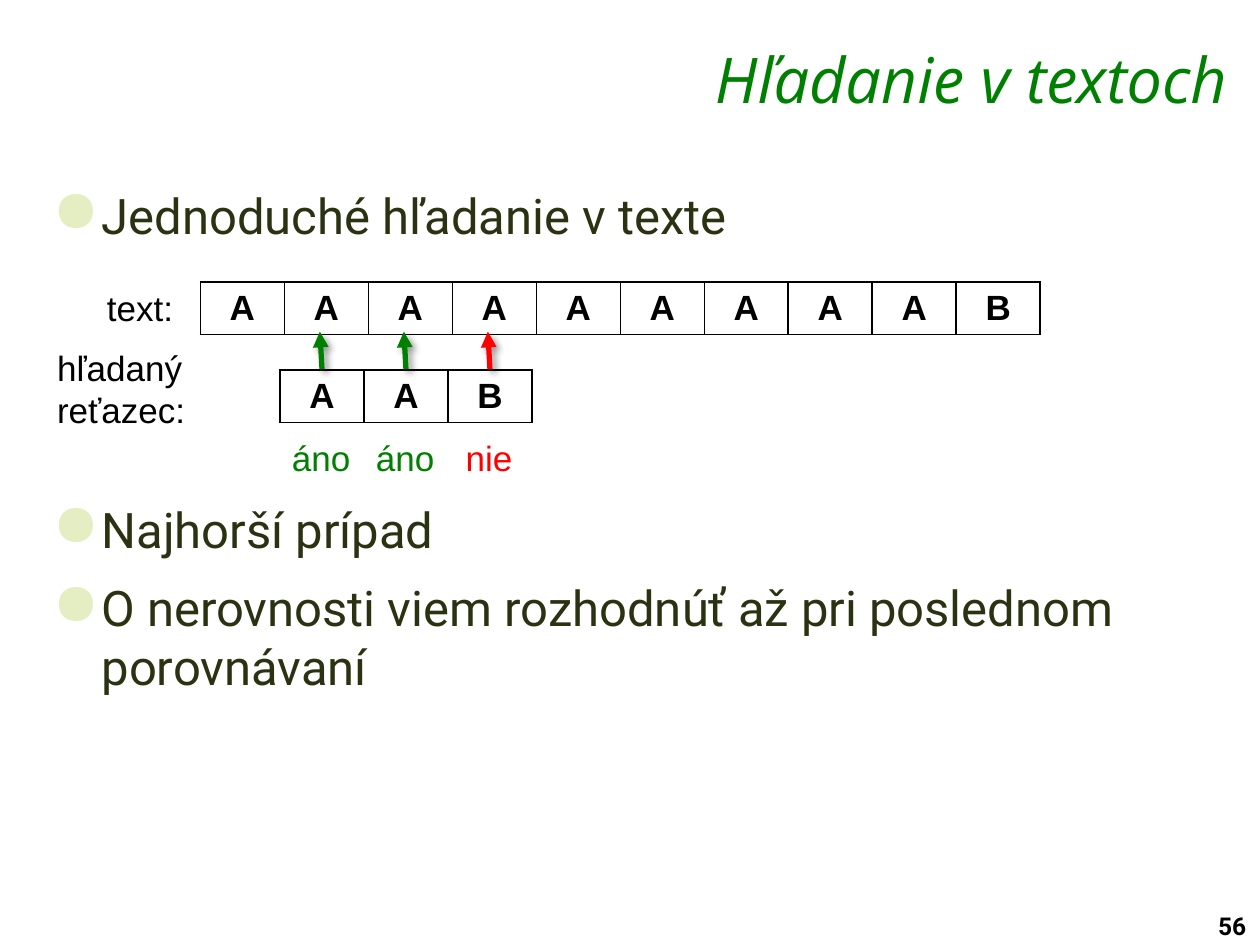
from lxml import etree
from pptx import Presentation
from pptx.dml.color import RGBColor
from pptx.enum import shapes, text
from pptx.oxml import ns
from pptx.util import Pt

COLORS = {
    "title": "008000", "body": "2B3212", "bullet": "E5EEC2",
    "ink": "000000", "paper": "FFFFFF", "match": "008000", "mismatch": "FF0000",
}
CELL_WIDTH, ROW_HEIGHT = 48, 29.5
PATTERN_LEFT, PATTERN_TOP = 160, 211.5


def rgb(name):
    return RGBColor.from_string(COLORS[name])


def add_xml(parent, tag, **attributes):
    return etree.SubElement(parent, ns.qn(tag), attributes)


def add_color(parent, name):
    return add_xml(parent, "a:srgbClr", val=COLORS[name])


def style(paragraph, font, size, color, bold=None, italic=None):
    paragraph.font.name = font
    paragraph.font.size = Pt(size)
    paragraph.font.color.rgb = rgb(color)
    paragraph.font.bold = bold
    paragraph.font.italic = italic


def set_title(slide, wording):
    title = slide.shapes.title
    title.left, title.top, title.width, title.height = Pt(165), Pt(23), Pt(543.5), Pt(42)
    frame = title.text_frame
    frame.text = wording
    frame.auto_size = text.MSO_AUTO_SIZE.NONE
    frame.vertical_anchor = text.MSO_ANCHOR.TOP
    frame.margin_top = 0
    frame.paragraphs[0].alignment = text.PP_ALIGN.RIGHT
    style(frame.paragraphs[0], "Open Sans", 36, "title", italic=True)


def add_label(slide, lines, left, top, width, height, color="ink",
              font="Arial", size=20, bold=None, align=text.PP_ALIGN.LEFT):
    label = slide.shapes.add_textbox(Pt(left), Pt(top), Pt(width), Pt(height))
    frame = label.text_frame
    frame.word_wrap = False
    frame.text = "\n".join(lines)
    for paragraph in frame.paragraphs:
        paragraph.alignment = align
        style(paragraph, font, size, color, bold)


def add_bullets(slide, points):
    """Add bulleted points, given as (wording, space before)."""
    body = slide.shapes.add_textbox(Pt(23), Pt(102.5), Pt(675.5), Pt(416))
    frame = body.text_frame
    frame.word_wrap = True
    frame.text = "\n".join(wording for wording, _ in points)
    for paragraph, (_, gap) in zip(frame.paragraphs, points):
        properties = paragraph._p.get_or_add_pPr()
        properties.set("marL", str(Pt(28)))
        properties.set("indent", str(Pt(-28)))
        add_color(add_xml(properties, "a:buClr"), "bullet")
        add_xml(properties, "a:buSzPct", val="120000")
        add_xml(properties, "a:buChar", char="●")
        paragraph.space_before = Pt(gap)
        paragraph.space_after = Pt(5.6)
        style(paragraph, "Roboto", 28, "body")


def border_cell(cell):
    properties = cell._tc.get_or_add_tcPr()
    for side in ("a:lnL", "a:lnR", "a:lnT", "a:lnB"):
        line = add_xml(properties, side, w=str(Pt(1)))
        add_color(add_xml(line, "a:solidFill"), "ink")


def add_letters(slide, letters, left, top):
    table = slide.shapes.add_table(
        1, len(letters), Pt(left), Pt(top),
        Pt(CELL_WIDTH * len(letters)), Pt(ROW_HEIGHT)).table
    for column, cell, letter in zip(table.columns, table.rows[0].cells, letters):
        column.width = Pt(CELL_WIDTH)
        border_cell(cell)
        cell.fill.solid()
        cell.fill.fore_color.rgb = rgb("paper")
        cell.margin_top = cell.margin_bottom = Pt(3)
        cell.vertical_anchor = text.MSO_ANCHOR.MIDDLE
        cell.text = letter
        paragraph = cell.text_frame.paragraphs[0]
        paragraph.alignment = text.PP_ALIGN.CENTER
        style(paragraph, "Arial", 20, "ink", bold=True)


def add_arrow(slide, x, color):
    arrow = slide.shapes.add_connector(
        shapes.MSO_CONNECTOR.STRAIGHT, Pt(x), Pt(211), Pt(x - 1.2), Pt(189.5))
    arrow.line.width = Pt(3)
    arrow.line.color.rgb = rgb(color)
    add_xml(arrow.line._get_or_add_ln(), "a:tailEnd", type="triangle")
    effects = add_xml(arrow._element.spPr, "a:effectLst")
    shadow = add_xml(effects, "a:outerShdw", blurRad=str(Pt(4)), dist=str(Pt(3)),
                     dir="2700000", algn="tl", rotWithShape="0")
    add_xml(add_color(shadow, "ink"), "a:alpha", val="40000")


def add_comparison(slide, index, answer, color):
    center = PATTERN_LEFT + CELL_WIDTH * (index + 0.5)
    add_arrow(slide, center, color)
    add_label(slide, [answer], center - 24.5, 246, 48, 31.5, color,
              align=text.PP_ALIGN.CENTER)


def main():
    deck = Presentation()
    deck.slide_width, deck.slide_height = Pt(720), Pt(540)
    slide = deck.slides.add_slide(deck.slide_layouts[5])

    # Title and points; the second point leaves room for the diagram
    set_title(slide, "Hľadanie v textoch")
    add_bullets(slide, [
        ("Jednoduché hľadanie v texte", 0),
        ("Najhorší prípad", 140),
        ("O nerovnosti viem rozhodnúť až pri poslednom porovnávaní", 5.6),
    ])

    # Searched text and pattern
    add_letters(slide, "AAAAAAAAAB", 114.5, 161)
    add_letters(slide, "AAB", PATTERN_LEFT, PATTERN_TOP)
    add_label(slide, ["text:"], 54, 160, 52.5, 31.5)
    add_label(slide, ["hľadaný", "reťazec:"], 25.5, 194.5, 90, 55.5)

    # Letter by letter comparison
    answers = [("áno", "match"), ("áno", "match"), ("nie", "mismatch")]
    for index, (answer, color) in enumerate(answers):
        add_comparison(slide, index, answer, color)

    # Page number
    add_label(slide, ["56"], 689, 517, 36.5, 24, font="Roboto", size=14, bold=True)
    deck.save("out.pptx")


if __name__ == "__main__":
    main()
